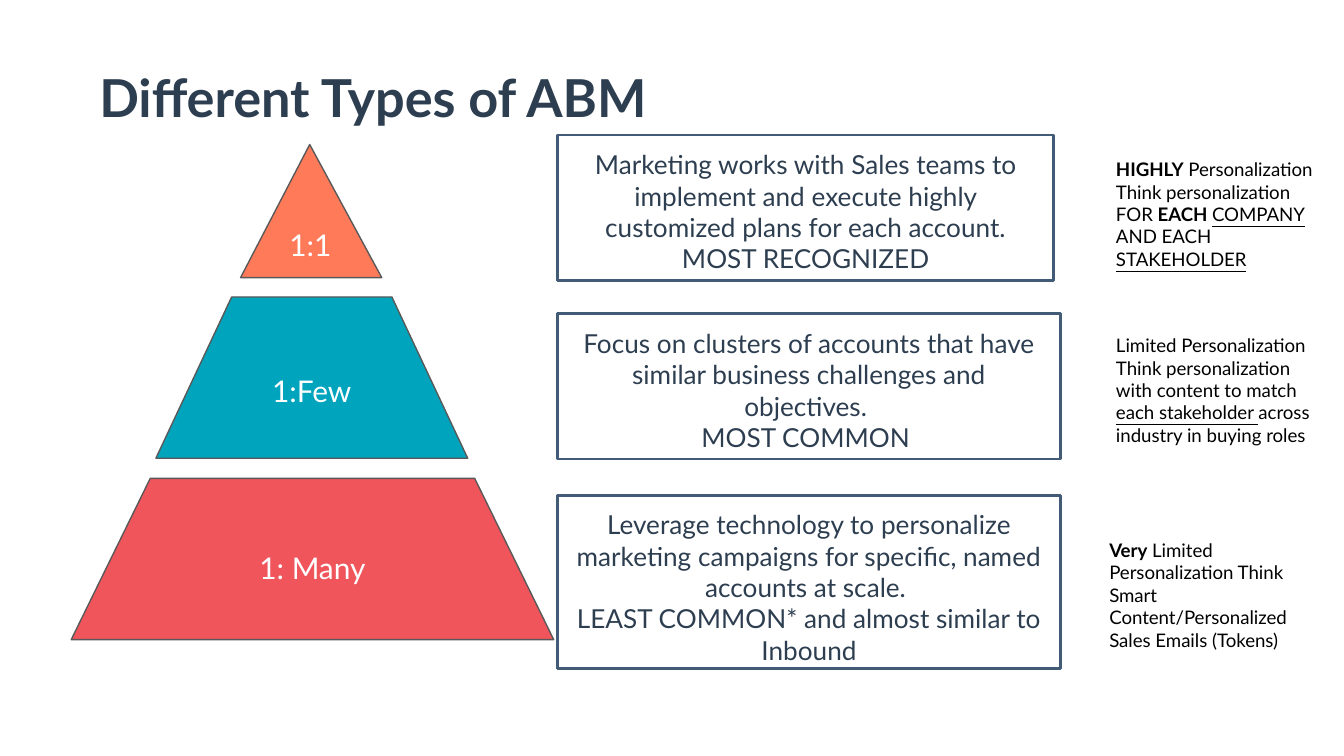
"""Build the slide on the three types of account-based marketing."""
from dataclasses import dataclass

from pptx import Presentation
from pptx.dml.color import RGBColor
from pptx.enum.shapes import MSO_SHAPE
from pptx.enum.text import MSO_ANCHOR, PP_ALIGN
from pptx.util import Emu, Pt

TRIANGLE = MSO_SHAPE.ISOSCELES_TRIANGLE
TRAPEZOID = MSO_SHAPE.TRAPEZOID
RECTANGLE = MSO_SHAPE.RECTANGLE
TOP, MIDDLE = MSO_ANCHOR.TOP, MSO_ANCHOR.MIDDLE
LEFT, CENTER = PP_ALIGN.LEFT, PP_ALIGN.CENTER
EMU_PER_PX = 4572
SLIDE_WIDTH, SLIDE_HEIGHT = 2000, 1125
INSET = 20


@dataclass(frozen=True)
class Theme:
    font: str = "Lato"
    navy: str = "2D3E50"
    frame: str = "425B76"
    outline: str = "595959"
    white: str = "FFFFFF"
    black: str = "000000"
    coral: str = "FF7A59"
    teal: str = "00A4BD"
    red: str = "F0555C"
    title_size: int = 28
    tier_size: int = 16
    description_size: int = 14
    note_size: int = 10
    tier_line: float = 0.75
    frame_line: float = 1.5


@dataclass(frozen=True)
class Box:
    left: int
    top: int
    width: int
    height: int


@dataclass(frozen=True)
class Span:
    text: str
    bold: bool = False
    underline: bool = False


@dataclass(frozen=True)
class Tier:
    label: str
    geometry: int
    adjustment: float
    color: str
    area: Box
    description: str
    description_area: Box
    note: tuple[Span, ...]
    note_area: Box


THEME = Theme()
TIERS = (
    Tier("1:1", TRIANGLE, 0.49, THEME.coral, Box(358, 215, 210, 198),
         "Marketing works with Sales teams to implement and execute highly "
         "customized plans for each account.\nMOST RECOGNIZED",
         Box(830, 201, 738, 216),
         (Span("HIGHLY", bold=True), Span(" Personalization Think personalization FOR "),
          Span("EACH ", bold=True), Span("COMPANY", underline=True),
          Span(" AND EACH "), Span("STAKEHOLDER", underline=True)),
         Box(1641, 215, 333, 198)),
    Tier("1:Few", TRAPEZOID, 0.47, THEME.teal, Box(232, 442, 464, 240),
         "Focus on clusters of accounts that have similar business challenges "
         "and objectives. \nMOST COMMON ",
         Box(830, 467, 748, 216),
         (Span("Limited Personalization Think personalization with content to match "),
          Span("each stakeholder ", underline=True),
          Span("across industry in buying roles")),
         Box(1641, 477, 333, 198)),
    Tier("1: Many", TRAPEZOID, 0.49, THEME.red, Box(106, 712, 718, 240),
         "Leverage technology to personalize marketing campaigns for specific, "
         "named accounts at scale. \nLEAST COMMON* and almost similar to Inbound",
         Box(830, 737, 748, 258),
         (Span("Very", bold=True),
          Span(" Limited Personalization Think Smart Content/Personalized "
               "Sales Emails (Tokens)")),
         Box(1631, 782, 333, 148)),
)


def px(length: int) -> Emu:
    """Turn pixels into EMU."""
    return Emu(length * EMU_PER_PX)


def place(area: Box) -> tuple[Emu, Emu, Emu, Emu]:
    """Give the position and size of an area in EMU."""
    return px(area.left), px(area.top), px(area.width), px(area.height)


def prepare_frame(frame, anchor: int) -> None:
    """Set wrapping, anchor and equal insets."""
    frame.word_wrap = True
    frame.vertical_anchor = anchor
    frame.margin_left = frame.margin_right = px(INSET)
    frame.margin_top = frame.margin_bottom = px(INSET)


def style_run(run, size: int, color: str, bold: bool = False, underline: bool = False) -> None:
    """Apply the theme font with the given look."""
    run.font.name = THEME.font
    run.font.size = Pt(size)
    run.font.color.rgb = RGBColor.from_string(color)
    run.font.bold = bold
    run.font.underline = underline


def write_text(frame, text: str, size: int, color: str, align: int, bold: bool = False) -> None:
    """Fill a frame with evenly styled paragraphs."""
    frame.text = text
    for paragraph in frame.paragraphs:
        paragraph.alignment = align
        for run in paragraph.runs:
            style_run(run, size, color, bold)


def draw_title(slide, text: str, area: Box) -> None:
    """Draw the heading."""
    heading = slide.shapes.add_textbox(*place(area)).text_frame
    prepare_frame(heading, TOP)
    write_text(heading, text, THEME.title_size, THEME.navy, LEFT, bold=True)


def draw_level(slide, tier: Tier) -> None:
    """Draw one level of the pyramid."""
    level = slide.shapes.add_shape(tier.geometry, *place(tier.area))
    level.adjustments[0] = tier.adjustment
    level.shadow.inherit = False
    level.fill.solid()
    level.fill.fore_color.rgb = RGBColor.from_string(tier.color)
    level.line.color.rgb = RGBColor.from_string(THEME.outline)
    level.line.width = Pt(THEME.tier_line)
    prepare_frame(level.text_frame, MIDDLE)
    write_text(level.text_frame, tier.label, THEME.tier_size, THEME.white, CENTER)


def draw_description(slide, tier: Tier) -> None:
    """Draw the framed description of a tier."""
    description = slide.shapes.add_shape(RECTANGLE, *place(tier.description_area))
    description.shadow.inherit = False
    description.fill.background()
    description.line.color.rgb = RGBColor.from_string(THEME.frame)
    description.line.width = Pt(THEME.frame_line)
    prepare_frame(description.text_frame, TOP)
    write_text(description.text_frame, tier.description,
               THEME.description_size, THEME.navy, CENTER)


def draw_note(slide, tier: Tier) -> None:
    """Draw the personalization note of a tier."""
    note = slide.shapes.add_textbox(*place(tier.note_area)).text_frame
    prepare_frame(note, TOP)
    for span in tier.note:
        run = note.paragraphs[0].add_run()
        run.text = span.text
        style_run(run, THEME.note_size, THEME.black, span.bold, span.underline)


def main() -> None:
    """Build and save the presentation."""
    presentation = Presentation()
    presentation.slide_width = px(SLIDE_WIDTH)
    presentation.slide_height = px(SLIDE_HEIGHT)
    slide = presentation.slides.add_slide(presentation.slide_layouts[6])
    draw_title(slide, "Different Types of ABM", Box(128, 77, 1096, 140))
    for draw in (draw_level, draw_description, draw_note):
        for tier in TIERS:
            draw(slide, tier)
    presentation.save("out.pptx")


if __name__ == "__main__":
    main()
